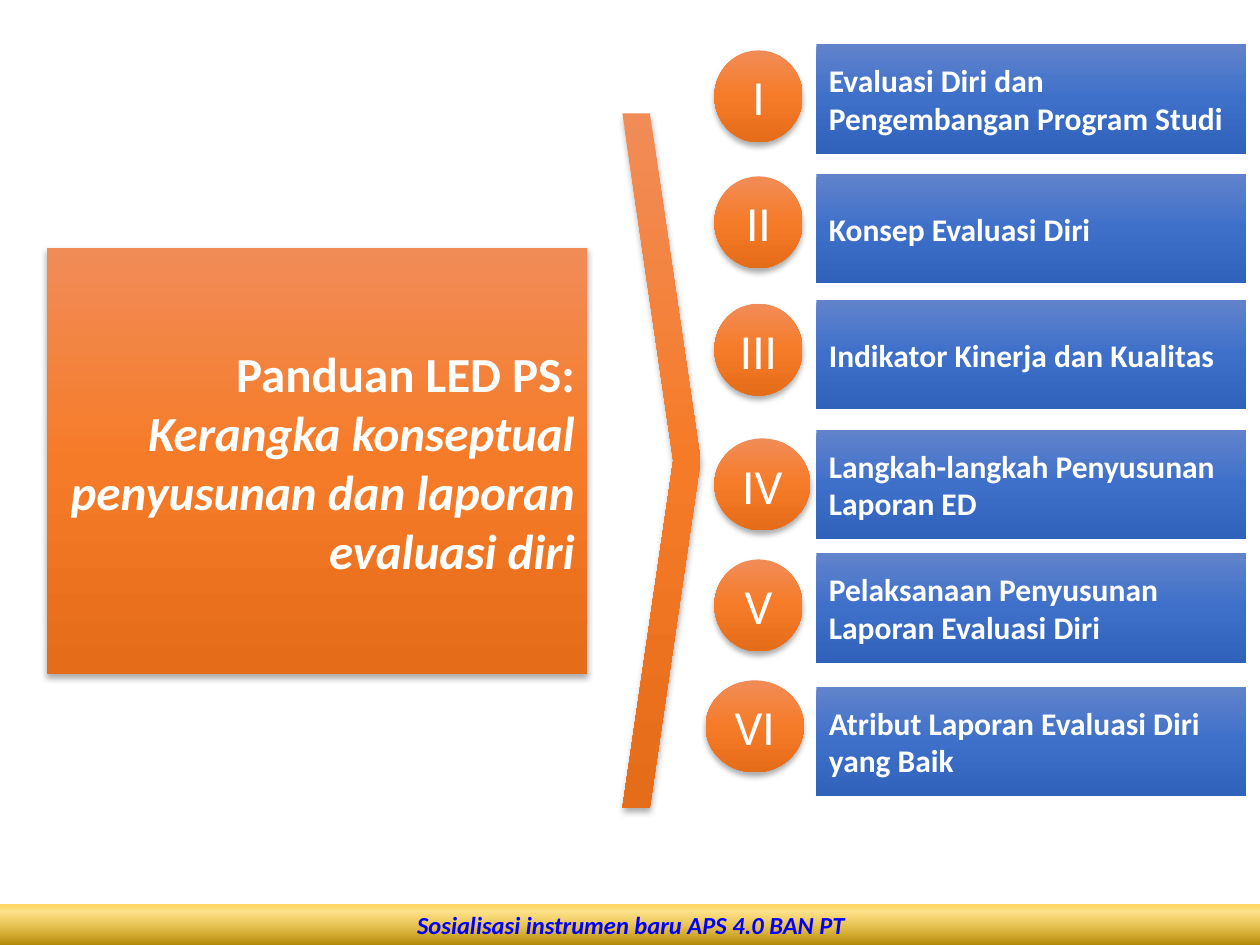
from dataclasses import dataclass

from lxml.etree import SubElement
from pptx import Presentation
from pptx.dml.color import RGBColor
from pptx.enum.shapes import MSO_SHAPE as Shape
from pptx.enum.text import MSO_ANCHOR as Anchor, PP_ALIGN as Align
from pptx.oxml.ns import qn
from pptx.util import Inches, Pt

# Slide grid: 100 columns by 75 rows of square cells
COLS, ROWS = 100, 75
WIDTH, HEIGHT = Inches(10), Inches(7.5)
FONT = "Calibri"

WHITE = RGBColor(0xFF, 0xFF, 0xFF)
BLACK = RGBColor(0x00, 0x00, 0x00)
FOOTER_BLUE = RGBColor(0x00, 0x00, 0xFF)


@dataclass(frozen=True)
class Stop:
    pos: int
    color: RGBColor
    alpha: int = 100


@dataclass(frozen=True)
class Gradient:
    stops: tuple[Stop, ...]
    angle: int = 90


@dataclass(frozen=True)
class Box:
    col: float
    row: float
    cols: float
    rows: float


@dataclass(frozen=True)
class Chapter:
    numeral: str
    title: str
    bar_row: float
    badge_row: float
    badge_col: float = 56.7
    badge_cols: float = 7


ORANGE = Gradient((Stop(0, RGBColor(0xF1, 0x8C, 0x57)),
                   Stop(50, RGBColor(0xF6, 0x7B, 0x28)),
                   Stop(100, RGBColor(0xE5, 0x6C, 0x19))))
BLUE = Gradient((Stop(0, RGBColor(0x61, 0x83, 0xCB)),
                 Stop(50, RGBColor(0x3E, 0x70, 0xCA)),
                 Stop(100, RGBColor(0x30, 0x62, 0xBB))))
GOLD = Gradient((Stop(0, RGBColor(0xAB, 0x81, 0x00)),
                 Stop(83, RGBColor(0xFF, 0xC2, 0x08), 46),
                 Stop(100, RGBColor(0xFF, 0xD9, 0x66))), 270)

CHAPTERS = (
    Chapter("I", "Evaluasi Diri dan Pengembangan Program Studi", 3.5, 4),
    Chapter("II", "Konsep Evaluasi Diri", 13.8, 14),
    Chapter("III", "Indikator Kinerja dan Kualitas", 23.8, 24.1),
    Chapter("IV", "Langkah-langkah Penyusunan Laporan ED", 34.1, 34.8, badge_cols=7.6),
    Chapter("V", "Pelaksanaan Penyusunan Laporan Evaluasi Diri", 43.9, 44.4),
    Chapter("VI", "Atribut Laporan Evaluasi Diri yang Baik", 54.5, 54, 56, 7.8),
)


def add_color(parent, color: RGBColor, alpha: int) -> None:
    clr = SubElement(parent, qn("a:srgbClr"), val=str(color))
    if alpha < 100:
        SubElement(clr, qn("a:alpha"), val=str(alpha * 1000))


def set_gradient(sp, gradient: Gradient) -> None:
    """Replace the fill of a shape by a linear gradient."""
    sp.fill.background()
    fill = sp._element.spPr.find(qn("a:noFill"))
    fill.tag = qn("a:gradFill")
    stops = SubElement(fill, qn("a:gsLst"))
    for stop in gradient.stops:
        gs = SubElement(stops, qn("a:gs"), pos=str(stop.pos * 1000))
        add_color(gs, stop.color, stop.alpha)
    SubElement(fill, qn("a:lin"), ang=str(gradient.angle * 60000), scaled="0")


def add_block(s, kind, box: Box, gradient: Gradient, shadow: bool = False):
    """Add a borderless gradient shape, with a soft shadow below if asked."""
    x, y = WIDTH / COLS, HEIGHT / ROWS
    sp = s.shapes.add_shape(kind, round(box.col * x), round(box.row * y),
                            round(box.cols * x), round(box.rows * y))
    set_gradient(sp, gradient)
    sp.line.fill.background()
    sp.shadow.inherit = False
    if shadow:
        effects = sp._element.spPr.find(qn("a:effectLst"))
        outer = SubElement(effects, qn("a:outerShdw"), blurRad=str(Pt(3.5)),
                           dist=str(Pt(2.2)), dir="5400000", rotWithShape="0")
        add_color(outer, BLACK, 32)
    return sp


def set_text(sp, text: str, size: int, align: Align, bold: bool = True,
             color: RGBColor = WHITE, wrap: bool = True) -> None:
    tf = sp.text_frame
    tf.word_wrap = wrap
    tf.vertical_anchor = Anchor.MIDDLE
    tf.text = text
    for p in tf.paragraphs:
        p.alignment = align
        for r in p.runs:
            r.font.name, r.font.size, r.font.bold = FONT, Pt(size), bold
            r.font.color.rgb = color


def add_chapter(s, chapter: Chapter) -> None:
    """Draw one chapter: title bar and numbered badge."""
    bar = add_block(s, Shape.RECTANGLE, Box(64.8, chapter.bar_row, 34.1, 8.7), BLUE)
    set_text(bar, chapter.title, 18, Align.LEFT)
    badge = add_block(s, Shape.OVAL, Box(chapter.badge_col, chapter.badge_row,
                                         chapter.badge_cols, 7.3), ORANGE, shadow=True)
    set_text(badge, chapter.numeral, 28, Align.CENTER, bold=False, wrap=False)


def main() -> None:
    prs = Presentation()
    prs.slide_width, prs.slide_height = WIDTH, HEIGHT
    s = prs.slides.add_slide(prs.slide_layouts[6])

    # Footer band
    footer = add_block(s, Shape.RECTANGLE, Box(-0.1, 71.7, 100.4, 3.4), GOLD)
    footer.line.color.rgb = WHITE
    footer.line.width = Pt(0.75)
    set_text(footer, "Sosialisasi instrumen baru APS 4.0 BAN PT", 14,
             Align.CENTER, color=FOOTER_BLUE)
    footer.text_frame.paragraphs[0].runs[0].font.italic = True

    # Guide title
    title = add_block(s, Shape.RECTANGLE, Box(3.7, 19.7, 42.9, 33.8), ORANGE, shadow=True)
    set_text(title, "Panduan LED PS:\n"
             "Kerangka konseptual penyusunan dan laporan evaluasi diri", 28, Align.RIGHT)
    title.text_frame.paragraphs[1].runs[0].font.italic = True

    # Chevron leading to the chapters
    chevron = add_block(s, Shape.CHEVRON, Box(49.4, 9, 6.2, 55.1), ORANGE, shadow=True)
    chevron.adjustments[0] = 0.65

    # Chapters
    for chapter in CHAPTERS:
        add_chapter(s, chapter)

    prs.save("out.pptx")


if __name__ == "__main__":
    main()
